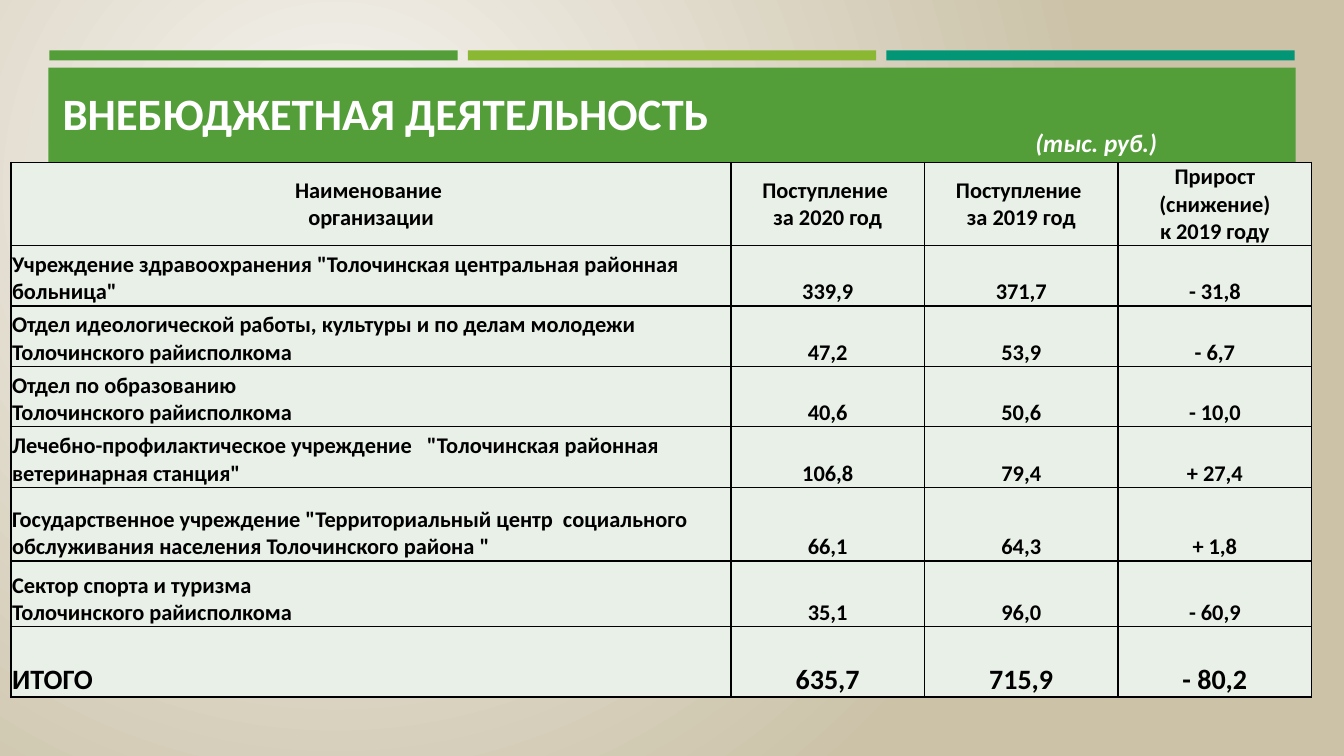
"""Builds the slide on extra-budgetary receipts by organisation."""
from dataclasses import dataclass

from lxml import etree
from pptx import Presentation
from pptx.dml.color import RGBColor
from pptx.enum.shapes import MSO_SHAPE
from pptx.enum.text import MSO_ANCHOR, MSO_AUTO_SIZE, PP_ALIGN
from pptx.oxml.ns import qn
from pptx.util import Pt

RECT = MSO_SHAPE.RECTANGLE
LEFT, CENTER = PP_ALIGN.LEFT, PP_ALIGN.CENTER
MIDDLE, BOTTOM = MSO_ANCHOR.MIDDLE, MSO_ANCHOR.BOTTOM
NO_FIT = MSO_AUTO_SIZE.NONE
EMU_PER_PX = 9144
FONT = "Calibri"
WHITE, BLACK, CELL = "FFFFFF", "000000", "E9F0E8"
GREEN, LIME, TEAL = "549E39", "8AB833", "029676"
BG_INNER, BG_OUTER = "F7F5F2", "CBC2A8"


@dataclass(frozen=True)
class Bar:
    """A plain coloured rectangle, in px."""
    x: int
    y: int
    w: int
    h: int
    color: str


@dataclass(frozen=True)
class Row:
    """A table row: height in px, cell texts, text size and anchor."""
    h: int
    texts: tuple[str, ...]
    size: int = 16
    anchor: MSO_ANCHOR = BOTTOM
    name_align: PP_ALIGN = LEFT


BARS = [Bar(49 + 415 * i, 50, 405, 10, c) for i, c in enumerate((GREEN, LIME, TEAL))]
BARS.append(Bar(48, 67, 1237, 130, GREEN))

COLUMNS = (714, 192, 192, 192)
ROWS = (
    Row(81, ("Наименование \nорганизации", "Поступление \nза 2020 год",
             "Поступление \nза 2019 год", "Прирост (снижение)\nк 2019 году"),
        anchor=MIDDLE, name_align=CENTER),
    Row(60, ('Учреждение здравоохранения "Толочинская центральная районная больница"',
             "339,9", "371,7", "- 31,8")),
    Row(60, ("Отдел идеологической работы, культуры и по делам молодежи "
             "Толочинского райисполкома", "47,2", "53,9", "- 6,7")),
    Row(60, ("Отдел по образованию\nТолочинского райисполкома", "40,6", "50,6", "- 10,0")),
    Row(60, ('Лечебно-профилактическое учреждение   "Толочинская районная  '
             'ветеринарная станция"', "106,8", "79,4", "+ 27,4")),
    Row(73, ('Государственное учреждение "Территориальный центр  социального '
             'обслуживания населения Толочинского района "', "66,1", "64,3", "+ 1,8")),
    Row(65, ("Сектор спорта и туризма\nТолочинского райисполкома", "35,1", "96,0", "- 60,9")),
    Row(70, ("ИТОГО", "635,7", "715,9", "- 80,2"), size=20),
)


def px(n: int) -> int:
    """Turn px into EMU."""
    return n * EMU_PER_PX


def rgb(color: str) -> RGBColor:
    """Turn a hex string into a colour."""
    return RGBColor.from_string(color)


def write(tf, text: str, size: int, color: str, align: PP_ALIGN, italic: bool = False) -> None:
    """Write bold text, one paragraph per line."""
    for i, line in enumerate(text.split("\n")):
        p = tf.add_paragraph() if i else tf.paragraphs[0]
        p.alignment = align
        r = p.add_run()
        r.text = line
        r.font.name, r.font.size = FONT, Pt(size)
        r.font.bold, r.font.italic = True, italic
        r.font.color.rgb = rgb(color)


def paint_background(s) -> None:
    """Fill the slide with a circular gradient."""
    fill = s.background.fill
    fill.gradient()
    for stop, color in zip(fill.gradient_stops, (BG_INNER, BG_OUTER)):
        stop.color.rgb = rgb(color)
    lin = next(s.background._cSld.iter(qn("a:lin")))
    grad = lin.getparent()
    grad.remove(lin)
    circle = etree.SubElement(grad, qn("a:path"), path="circle")
    etree.SubElement(circle, qn("a:fillToRect"), l="50000", t="50000", r="100000", b="100000")


def add_bar(s, bar: Bar) -> None:
    """Draw one bar."""
    sp = s.shapes.add_shape(RECT, px(bar.x), px(bar.y), px(bar.w), px(bar.h))
    sp.shadow.inherit = False
    sp.fill.solid()
    sp.fill.fore_color.rgb = rgb(bar.color)
    sp.line.fill.background()


def add_title(s, text: str) -> None:
    """Place the title in front of the bars."""
    sp = s.shapes.title
    sp.left, sp.top, sp.width, sp.height = px(52), px(73), px(678), px(78)
    sp._element.getparent().append(sp._element)
    tf = sp.text_frame
    tf.auto_size, tf.vertical_anchor = NO_FIT, MIDDLE
    write(tf, text, 32, WHITE, LEFT)


def add_borders(cell) -> None:
    """Give a cell thin black borders."""
    props = cell._tc.get_or_add_tcPr()
    for i, side in enumerate(("lnL", "lnR", "lnT", "lnB")):
        ln = etree.Element(qn(f"a:{side}"), w=str(Pt(1)))
        solid = etree.SubElement(ln, qn("a:solidFill"))
        etree.SubElement(solid, qn("a:srgbClr"), val=BLACK)
        props.insert(i, ln)


def add_receipts_table(s) -> None:
    """Draw the table of receipts."""
    frame = s.shapes.add_table(len(ROWS), len(COLUMNS), px(11), px(161),
                               px(sum(COLUMNS)), px(sum(row.h for row in ROWS)))
    table = frame.table
    table.first_row = table.horz_banding = False
    for column, width in zip(table.columns, COLUMNS):
        column.width = px(width)
    for i, row in enumerate(ROWS):
        table.rows[i].height = px(row.h)
        for j, text in enumerate(row.texts):
            cell = table.cell(i, j)
            cell.margin_left = cell.margin_right = cell.margin_top = px(1)
            cell.margin_bottom = 0
            cell.vertical_anchor = row.anchor
            cell.fill.solid()
            cell.fill.fore_color.rgb = rgb(CELL)
            add_borders(cell)
            write(cell.text_frame, text, row.size, BLACK, CENTER if j else row.name_align)


def add_unit_note(s, text: str) -> None:
    """Write the unit of measure above the table."""
    tf = s.shapes.add_textbox(px(1017), px(121), px(174), px(40)).text_frame
    tf.word_wrap = True
    write(tf, text, 18, WHITE, LEFT, italic=True)


def main() -> None:
    """Build and save the slide."""
    prs = Presentation()
    prs.slide_width, prs.slide_height = px(1333), px(750)
    s = prs.slides.add_slide(prs.slide_layouts.get_by_name("Title Only"))
    paint_background(s)
    for bar in BARS:
        add_bar(s, bar)
    add_title(s, "ВНЕБЮДЖЕТНАЯ ДЕЯТЕЛЬНОСТЬ")
    add_receipts_table(s)
    add_unit_note(s, "(тыс. руб.)")
    prs.save("out.pptx")


if __name__ == "__main__":
    main()
